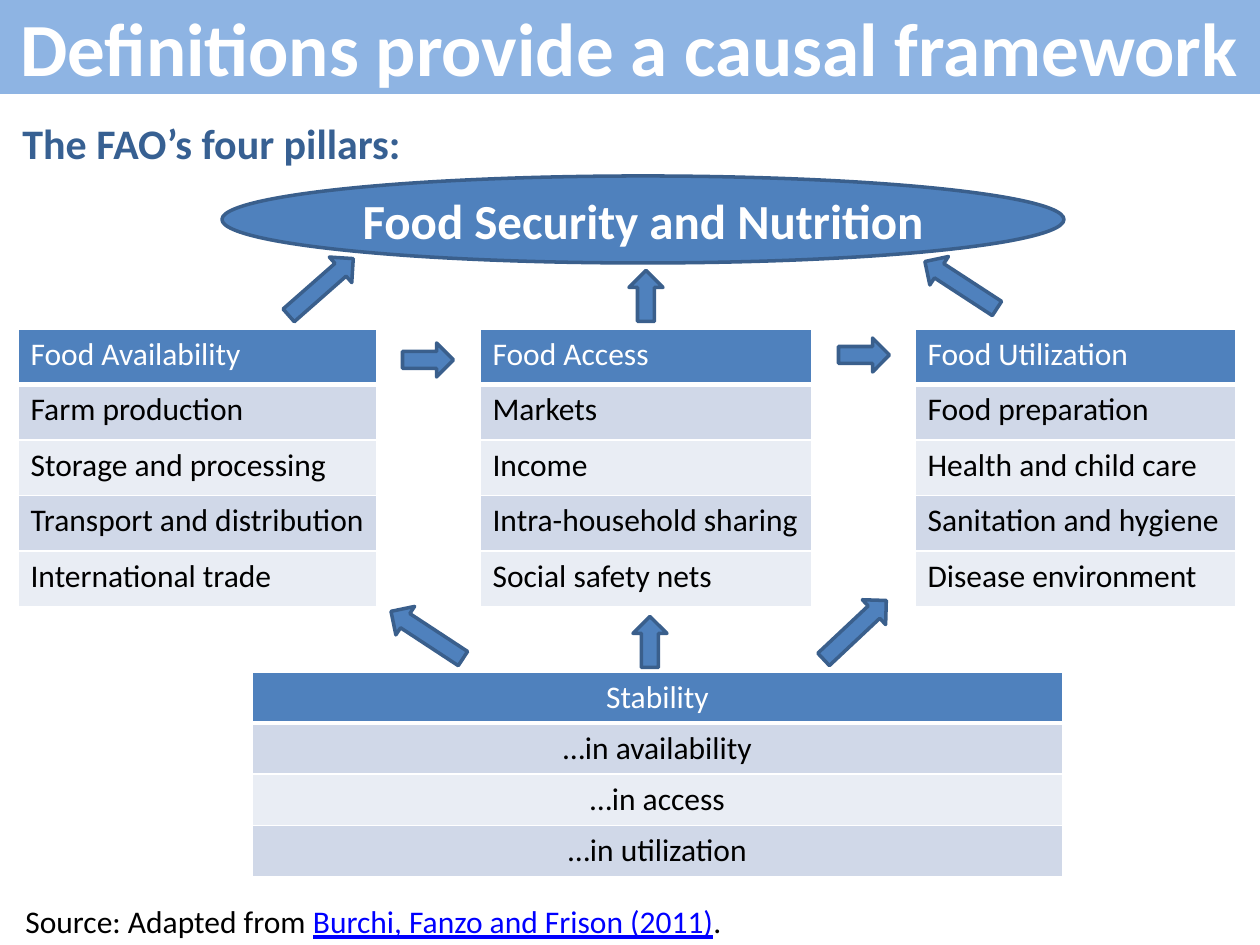
import pptx
import pptx.util
import pptx.dml.color
import pptx.enum.shapes
import pptx.enum.text
import pptx.oxml
import pptx.oxml.ns

SHAPE = pptx.enum.shapes.MSO_SHAPE
ALIGN = pptx.enum.text.PP_ALIGN
ANCHOR = pptx.enum.text.MSO_ANCHOR
EMU_PER_PX = 914400 / 126

BLUE, OUTLINE, BANNER, HEADING = "4F81BD", "3A5F8C", "8EB4E3", "376092"
BANDS = ("D0D8E8", "E9EDF4")
WHITE, BLACK, LINK = "FFFFFF", "000000", "0000FF"


def px(length):
    return pptx.util.Emu(round(length * EMU_PER_PX))


def color(hex_code):
    return pptx.dml.color.RGBColor.from_string(hex_code)


def write(paragraph, text, size=18, fill=BLACK, bold=False, underline=False, align=ALIGN.LEFT):
    paragraph.alignment = align
    run = paragraph.add_run()
    run.text = text
    font = run.font
    font.name = "Calibri"
    font.size = pptx.util.Pt(size)
    font.bold = bold
    font.underline = underline
    font.color.rgb = color(fill)


class SlideBuilder:
    def __init__(self, slide):
        self.shapes = slide.shapes

    def shape(self, kind, left, top, width, height, fill=BLUE, outline=OUTLINE, rotation=0):
        shape = self.shapes.add_shape(kind, px(left), px(top), px(width), px(height))
        shape.shadow.inherit = False
        shape.rotation = rotation
        shape.fill.solid()
        shape.fill.fore_color.rgb = color(fill)
        if outline:
            shape.line.color.rgb = color(outline)
            shape.line.width = pptx.util.Pt(2)
        else:
            shape.line.fill.background()
        return shape

    def label(self, kind, box, text, size, **look):
        frame = self.shape(kind, *box, **look).text_frame
        frame.vertical_anchor = ANCHOR.MIDDLE
        write(frame.paragraphs[0], text, size=size, fill=WHITE, bold=True, align=ALIGN.CENTER)

    def arrow(self, center_x, center_y, length, rotation=0):
        width = 34
        self.shape(SHAPE.UP_ARROW, center_x - width / 2, center_y - length / 2,
                   width, length, rotation=rotation)

    def text(self, left, top, width, height, runs):
        frame = self.shapes.add_textbox(px(left), px(top), px(width), px(height)).text_frame
        frame.word_wrap = False
        for text, look in runs:
            write(frame.paragraphs[0], text, **look)

    def borders(self, cell, bottom):
        properties = cell._tc.get_or_add_tcPr()
        for side, points in (("L", 1), ("R", 1), ("T", 1), ("B", bottom)):
            properties.append(pptx.oxml.parse_xml(
                f'<a:ln{side} {pptx.oxml.ns.nsdecls("a")} w="{points * 12700}"><a:solidFill>'
                f'<a:srgbClr val="{WHITE}"/></a:solidFill></a:ln{side}>'))

    def table(self, left, top, width, height, rows, align=ALIGN.LEFT):
        table = self.shapes.add_table(
            len(rows), 1, px(left), px(top), px(width), px(height)).table
        table.first_row = table.horz_banding = False
        for index, text in enumerate(rows):
            header = index == 0
            cell = table.cell(index, 0)
            self.borders(cell, bottom=3 if header else 1)
            cell.fill.solid()
            cell.fill.fore_color.rgb = color(BLUE if header else BANDS[(index - 1) % 2])
            write(cell.text_frame.paragraphs[0], text,
                  fill=WHITE if header else BLACK, align=align)


def main():
    presentation = pptx.Presentation()
    presentation.slide_width, presentation.slide_height = px(1260), px(945)
    builder = SlideBuilder(presentation.slides.add_slide(presentation.slide_layouts[6]))

    # Outcome
    builder.label(SHAPE.OVAL, (222, 176, 842, 87), "Food Security and Nutrition", 28)

    # Three pillars side by side
    pillars = [
        (18, 359, ["Food Availability", "Farm production", "Storage and processing",
                   "Transport and distribution", "International trade"]),
        (480, 332, ["Food Access", "Markets", "Income",
                    "Intra-household sharing", "Social safety nets"]),
        (915, 321, ["Food Utilization", "Food preparation", "Health and child care",
                    "Sanitation and hygiene", "Disease environment"]),
    ]
    for left, width, rows in pillars:
        builder.table(left, 329, width, 278, rows)

    # Fourth pillar underneath
    stability = ["Stability", "…in availability", "…in access", "…in utilization"]
    builder.table(252, 672, 811, 202, stability, align=ALIGN.CENTER)

    # Causal arrows: pillars to outcome, pillar to pillar, stability to pillars
    short, long = 51, 86
    for arrow in [
        (321, 287, long, 48.7), (646, 296, short, 0), (961, 285, long, 303.1),
        (428, 360, short, 90), (864, 355, short, 90),
        (427, 635, long, 303.3), (650, 642, short, 0), (855, 630, long, 46.8),
    ]:
        builder.arrow(*arrow)

    # Title banner and heading
    builder.label(SHAPE.RECTANGLE, (-2, -2, 1262, 96), "Definitions provide a causal framework",
                  42.9, fill=BANNER, outline=None)
    builder.text(10, 111, 407, 63, [
        ("The FAO’s four pillars:", dict(size=24, fill=HEADING, bold=True))])

    # Source
    builder.text(13, 896, 737, 50, [
        ("Source: Adapted from ", {}),
        ("Burchi, Fanzo and Frison (2011)", dict(fill=LINK, underline=True)),
        (".", {})])

    presentation.save("out.pptx")


if __name__ == "__main__":
    main()
